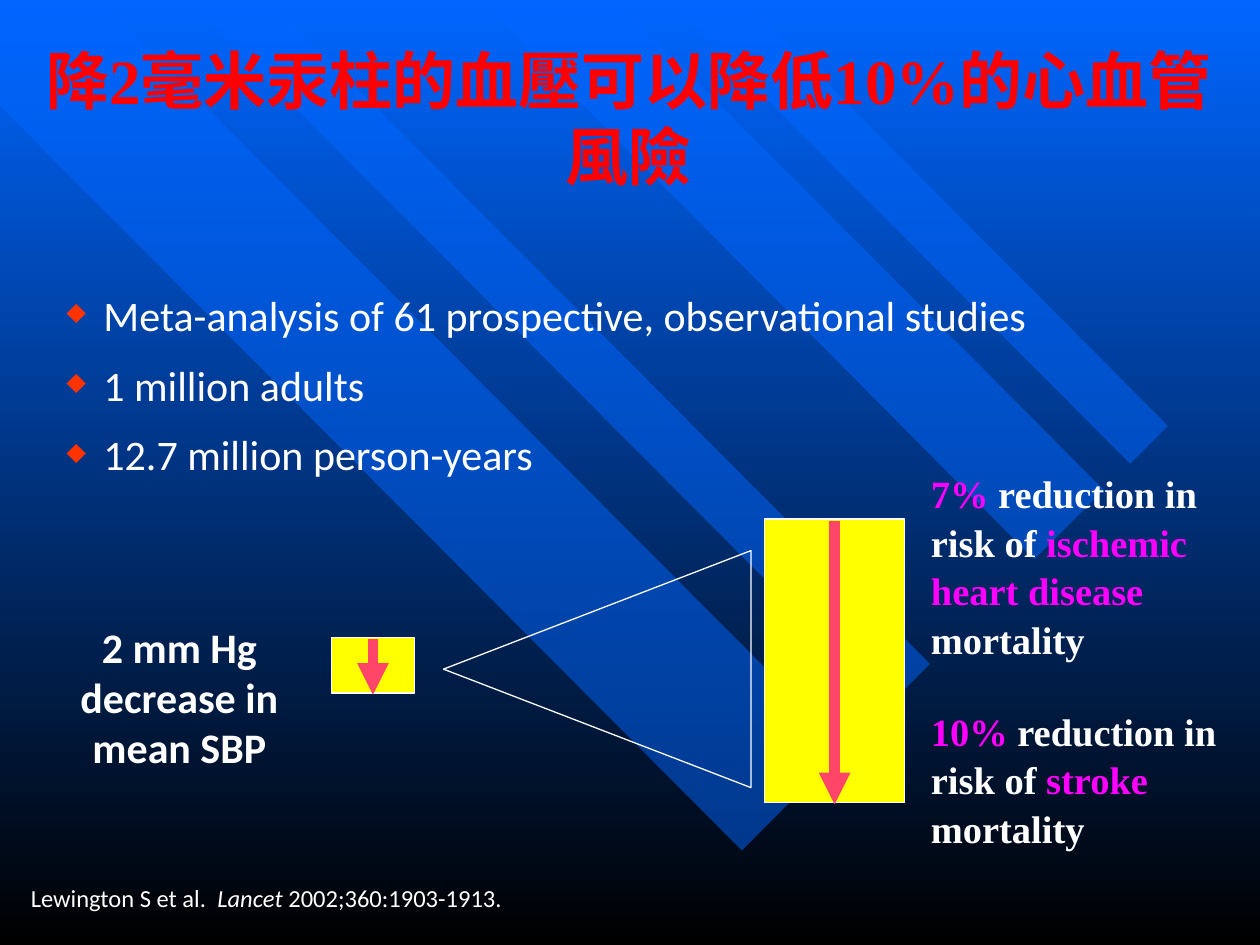
from pptx import Presentation
from pptx.dml.color import RGBColor
from pptx.enum.shapes import MSO_CONNECTOR, MSO_SHAPE
from pptx.enum.text import MSO_ANCHOR, PP_ALIGN
from pptx.oxml.ns import qn
from pptx.util import Pt
from lxml import etree

RECTANGLE = MSO_SHAPE.RECTANGLE
TRIANGLE = MSO_SHAPE.ISOSCELES_TRIANGLE
STRAIGHT = MSO_CONNECTOR.STRAIGHT
LEFT, CENTER = PP_ALIGN.LEFT, PP_ALIGN.CENTER
TOP = MSO_ANCHOR.TOP

BLUE = RGBColor(0x00, 0x66, 0xFF)
BLACK = RGBColor(0x00, 0x00, 0x00)
WHITE = RGBColor(0xFF, 0xFF, 0xFF)
RED = RGBColor(0xFF, 0x00, 0x00)
YELLOW = RGBColor(0xFF, 0xFF, 0x00)
MAGENTA = RGBColor(0xFF, 0x00, 0xFF)
PINK = RGBColor(0xFF, 0x45, 0x68)
BULLET_RED = RGBColor(0xFF, 0x33, 0x00)

SANS, SERIF = "Calibri", "Times New Roman"

BANDS = [
    [(482.4, 427), (56.9, 0), (0, 0), (0, 60.5), (424, 486)],
    [(154, 0), (531.4, 379.4), (508.3, 402.5), (107.3, 0)],
    [(352, 0), (630.7, 280), (591, 319.7), (273.6, 0)],
    [(381.6, 0), (645.8, 265), (667.4, 243.4), (425.5, 0)],
]


def add_child(parent, tag, **attributes):
    return etree.SubElement(parent, qn(tag), attributes)


def write_runs(paragraph, runs, *, size, font=SANS, color=WHITE, bold=False,
               align=LEFT, line_spacing=None):
    paragraph.alignment = align
    paragraph.line_spacing = line_spacing
    for text, changes in runs:
        run = paragraph.add_run()
        run.text = text
        run.font.name = font
        run.font.size = Pt(size)
        run.font.bold = bold
        run.font.italic = changes.get("italic", False)
        run.font.color.rgb = changes.get("color", color)


def add_text(slide, box, runs, inset=7.2, **text_format):
    frame = slide.shapes.add_textbox(*map(Pt, box)).text_frame
    frame.word_wrap = True
    frame.margin_left = Pt(inset)
    write_runs(frame.paragraphs[0], runs, **text_format)
    return frame


def add_background(slide):
    fill = slide.background.fill
    fill.gradient()
    fill.gradient_angle = 270
    for stop, position, color in zip(fill.gradient_stops, (0, 1), (BLUE, BLACK)):
        stop.position = position
        stop.color.rgb = color


def add_bands(slide, left, top):
    for points in BANDS:
        corners = [(Pt(left + x), Pt(top + y)) for x, y in points]
        builder = slide.shapes.build_freeform(*corners[0])
        builder.add_line_segments(corners[1:], close=True)
        band = builder.convert_to_shape()
        band.shadow.inherit = False
        band.fill.solid()
        band.fill.fore_color.rgb = BLUE
        band.line.fill.background()
        color = band._element.spPr.find(qn("a:solidFill"))[0]
        add_child(color, "a:alpha", val="50000")


def place_title(slide, box, text):
    title = slide.shapes.title
    slide.shapes._spTree.append(title._element)
    title.left, title.top, title.width, title.height = map(Pt, box)
    frame = title.text_frame
    frame.word_wrap = True
    frame.vertical_anchor = TOP
    write_runs(frame.paragraphs[0], [(text, {})], size=36, font=SERIF,
               color=RED, bold=True, align=CENTER)


def add_bullets(slide, box, lines):
    frame = slide.shapes.add_textbox(*map(Pt, box)).text_frame
    frame.word_wrap = True
    for index, line in enumerate(lines):
        paragraph = frame.add_paragraph() if index else frame.paragraphs[0]
        paragraph.space_before = Pt(11 if index else 0)
        properties = paragraph._p.get_or_add_pPr()
        properties.set("marL", str(Pt(21)))
        properties.set("indent", str(-Pt(21)))
        color = add_child(properties, "a:buClr")
        add_child(color, "a:srgbClr", val=str(BULLET_RED))
        add_child(properties, "a:buSzPct", val="60000")
        add_child(properties, "a:buChar", char="◆")
        write_runs(paragraph, [(line, {})], size=24)


def add_outlined(slide, kind, box, fill=None):
    shape = slide.shapes.add_shape(kind, *map(Pt, box))
    shape.shadow.inherit = False
    if fill is None:
        shape.fill.background()
    else:
        shape.fill.solid()
        shape.fill.fore_color.rgb = fill
    shape.line.color.rgb = WHITE
    shape.line.width = Pt(0.75)
    return shape


def add_falling_bar(slide, box):
    left, top, width, height = box
    add_outlined(slide, RECTANGLE, box, YELLOW)
    center = Pt(left + width / 2)
    arrow = slide.shapes.add_connector(
        STRAIGHT, center, Pt(top + 1), center, Pt(top + height + 1))
    arrow.line.color.rgb = PINK
    arrow.line.width = Pt(6)
    add_child(arrow.line._get_or_add_ln(), "a:tailEnd", type="triangle")
    add_child(arrow._element.spPr, "a:effectLst")


def add_effect_diagram(slide, left, top):
    add_falling_bar(slide, (left + 177.4, top + 100.3, 47.5, 31.7))
    add_falling_bar(slide, (left + 425, top + 32.6, 79.9, 162))
    wedge = add_outlined(slide, TRIANGLE, (left + 261.6, top + 30.5, 135.4, 175.7))
    wedge.rotation = 270
    add_text(slide, (left, top + 87.4, 181, 94), [("2 mm Hg decrease in mean SBP", {})],
             size=24, bold=True, align=CENTER)
    highlight = {"color": MAGENTA}
    outcomes = [
        (0, 113, "7%", "ischemic heart disease"),
        (135.6, 86, "10%", "stroke"),
    ]
    for offset, height, share, outcome in outcomes:
        runs = [(share, highlight), (" reduction in risk of ", {}),
                (outcome, highlight), (" mortality", {})]
        add_text(slide, (left + 512.9, top + offset, 183.6, height), runs,
                 size=22, font=SERIF, bold=True, line_spacing=1.05)


def main():
    presentation = Presentation()
    presentation.slide_width, presentation.slide_height = Pt(720), Pt(540)
    slide = presentation.slides.add_slide(presentation.slide_layouts[5])
    add_background(slide)
    add_bands(slide, 0, 0)
    place_title(slide, (14.4, 20.2, 689.8, 80.6), "降2毫米汞柱的血壓可以降低10%的心血管風險")
    add_bullets(slide, (31, 162, 658, 122.4), [
        "Meta-analysis of 61 prospective, observational studies",
        "1 million adults",
        "12.7 million person-years",
    ])
    add_effect_diagram(slide, 12, 264)
    add_text(slide, (7.2, 501.1, 432, 23.8), [
        ("Lewington S et al.  ", {}),
        ("Lancet", {"italic": True}),
        (" 2002;360:1903-1913.", {}),
    ], inset=10.4, size=14)
    presentation.save("out.pptx")


if __name__ == "__main__":
    main()
